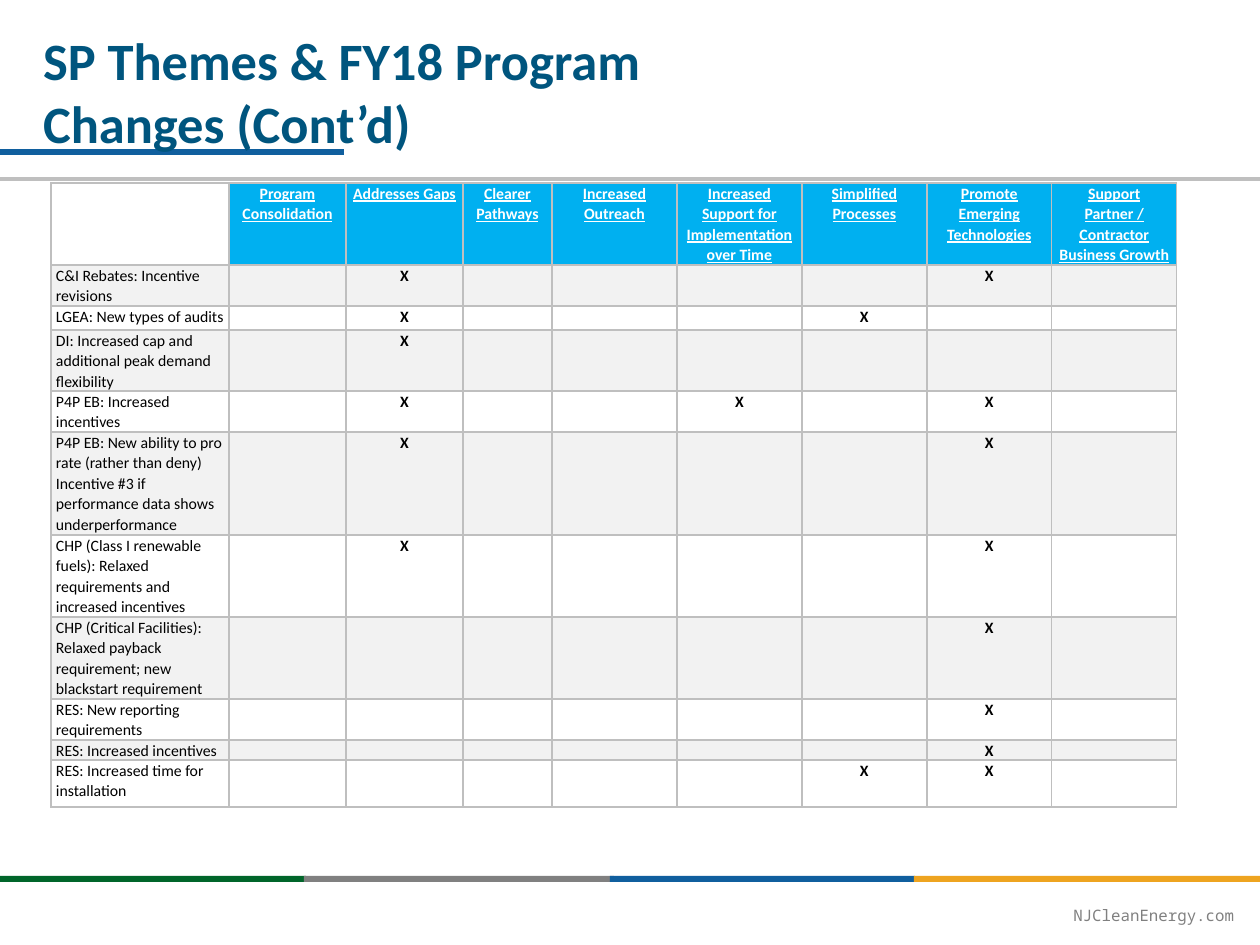
"""Build the slide that maps FY18 program changes to strategic plan themes."""
from lxml.etree import SubElement
from pptx import Presentation
from pptx.dml.color import RGBColor
from pptx.enum.shapes import MSO_CONNECTOR, MSO_SHAPE
from pptx.enum.text import MSO_ANCHOR, PP_ALIGN
from pptx.oxml import parse_xml
from pptx.oxml.ns import nsdecls, qn
from pptx.util import Pt

EMU_PER_PX = 914400 / 126
WHITE = RGBColor(0xFF, 0xFF, 0xFF)
BLACK = RGBColor(0x00, 0x00, 0x00)
GREEN = RGBColor(0x00, 0x65, 0x2A)
GRAY = RGBColor(0x80, 0x80, 0x80)
BLUE = RGBColor(0x10, 0x5F, 0x9E)
GOLD = RGBColor(0xEE, 0xA4, 0x20)
NAVY = RGBColor(0x00, 0x55, 0x7E)
SKY = RGBColor(0x00, 0xB0, 0xF0)
BAND = RGBColor(0xF2, 0xF2, 0xF2)
RULE = RGBColor(0xBF, 0xBF, 0xBF)

THEMES = ["Program Consolidation", "Addresses Gaps", "Clearer Pathways",
          "Increased Outreach", "Increased Support for Implementation over Time",
          "Simplified Processes", "Promote Emerging Technologies",
          "Support Partner / Contractor Business Growth"]
GAPS, SUPPORT, SIMPLIFIED, EMERGING = 2, 5, 6, 7
CHANGES = [
    ("C&I Rebates: Incentive revisions", {GAPS, EMERGING}),
    ("LGEA: New types of audits", {GAPS, SIMPLIFIED}),
    ("DI: Increased cap and additional peak demand flexibility", {GAPS}),
    ("P4P EB: Increased incentives", {GAPS, SUPPORT, EMERGING}),
    ("P4P EB: New ability to pro rate (rather than deny) Incentive #3 if "
     "performance data shows underperformance", {GAPS, EMERGING}),
    ("CHP (Class I renewable fuels): Relaxed requirements and increased incentives",
     {GAPS, EMERGING}),
    ("CHP (Critical Facilities): Relaxed payback requirement; new blackstart requirement",
     {EMERGING}),
    ("RES: New reporting requirements", {EMERGING}),
    ("RES: Increased incentives", {EMERGING}),
    ("RES: Increased time for installation", {SIMPLIFIED, EMERGING}),
]
COLUMN_WIDTHS = [178, 117, 117, 89] + [125] * 5
ROW_HEIGHTS = [82, 41, 24, 61, 41, 103, 82, 82, 41, 20, 47]


def px(length):
    return round(length * EMU_PER_PX)


class ThemeSlide:
    def __init__(self, slide, font="Calibri"):
        self.slide = slide
        self.font = font

    def add_words(self, paragraph, words, size, color, bold=False, underline=False, font=None):
        run = paragraph.add_run()
        run.text = words
        run.font.name = font or self.font
        run.font.size = Pt(size)
        run.font.color.rgb = color
        run.font.bold = bold
        run.font.underline = underline

    def bar(self, left, top, width, height, color):
        bar = self.slide.shapes.add_shape(
            MSO_SHAPE.RECTANGLE, px(left), px(top), px(width), px(height))
        bar.shadow.inherit = False
        bar.fill.solid()
        bar.fill.fore_color.rgb = color
        bar.line.fill.background()

    def rule(self, top, width, color, weight):
        rule = self.slide.shapes.add_connector(
            MSO_CONNECTOR.STRAIGHT, 0, px(top), px(width), px(top))
        rule.line.color.rgb = color
        rule.line.width = Pt(weight)
        SubElement(rule._element.spPr, qn("a:effectLst"))

    def text(self, left, top, width, height, words, size, color,
             inset=(0, 0), align=PP_ALIGN.LEFT, spacing=1.0, **style):
        frame = self.slide.shapes.add_textbox(
            px(left), px(top), px(width), px(height)).text_frame
        frame.word_wrap = True
        frame.vertical_anchor = MSO_ANCHOR.TOP
        frame.margin_left = frame.margin_right = px(inset[0])
        frame.margin_top = frame.margin_bottom = px(inset[1])
        paragraph = frame.paragraphs[0]
        paragraph.alignment = align
        paragraph.line_spacing = spacing
        self.add_words(paragraph, words, size, color, **style)

    def cell(self, cell, words, fill, color=BLACK, centered=True, **style):
        cell.margin_left = cell.margin_right = px(5)
        cell.margin_top = cell.margin_bottom = 0
        cell.fill.solid()
        cell.fill.fore_color.rgb = fill
        properties = cell._tc.get_or_add_tcPr()
        for position, side in enumerate("LRTB"):
            properties.insert(position, parse_xml(
                f'<a:ln{side} {nsdecls("a")} w="{Pt(1)}"><a:solidFill>'
                f'<a:srgbClr val="{RULE}"/></a:solidFill></a:ln{side}>'))
        paragraph = cell.text_frame.paragraphs[0]
        paragraph.alignment = PP_ALIGN.CENTER if centered else PP_ALIGN.LEFT
        paragraph.line_spacing = 1.07
        if words:
            self.add_words(paragraph, words, 9, color, **style)
        else:
            SubElement(paragraph._p, qn("a:endParaRPr"), sz="900")

    def matrix(self, left, top):
        table = self.slide.shapes.add_table(
            len(ROW_HEIGHTS), len(COLUMN_WIDTHS), px(left), px(top),
            px(sum(COLUMN_WIDTHS)), px(sum(ROW_HEIGHTS))).table
        table.first_row = table.horz_banding = False
        for column, width in zip(table.columns, COLUMN_WIDTHS):
            column.width = px(width)
        for row, height in zip(table.rows, ROW_HEIGHTS):
            row.height = px(height)
        self.cell(table.cell(0, 0), "", WHITE)
        for column, theme in enumerate(THEMES, 1):
            self.cell(table.cell(0, column), theme, SKY, WHITE, bold=True, underline=True)
        for row, (change, marked) in enumerate(CHANGES, 1):
            fill = BAND if row % 2 else WHITE
            self.cell(table.cell(row, 0), change, fill, centered=False)
            for column in range(1, len(COLUMN_WIDTHS)):
                mark = "X" if column in marked else ""
                self.cell(table.cell(row, column), mark, fill, bold=True)


def main():
    deck = Presentation()
    deck.slide_width, deck.slide_height = px(1260), px(945)
    page = ThemeSlide(deck.slides.add_slide(deck.slide_layouts[6]))
    for left, width, color in [(0, 306, GREEN), (304, 310, GRAY),
                               (610, 305, BLUE), (914, 346, GOLD)]:
        page.bar(left, 876, width, 6, color)
    page.text(-26, 902, 1260, 21, "NJCleanEnergy.com", 9, GRAY,
              align=PP_ALIGN.RIGHT, spacing=1.2, font="Noto Sans Mono")
    page.bar(0, 149, 344, 6, BLUE)
    page.rule(179, 1260, RULE, 1.75)
    page.text(30, 22, 811, 86, "SP Themes & FY18 Program Changes (Cont’d)", 30, NAVY,
              inset=(13, 6), bold=True)
    page.matrix(51, 183)
    deck.save("out.pptx")


if __name__ == "__main__":
    main()
